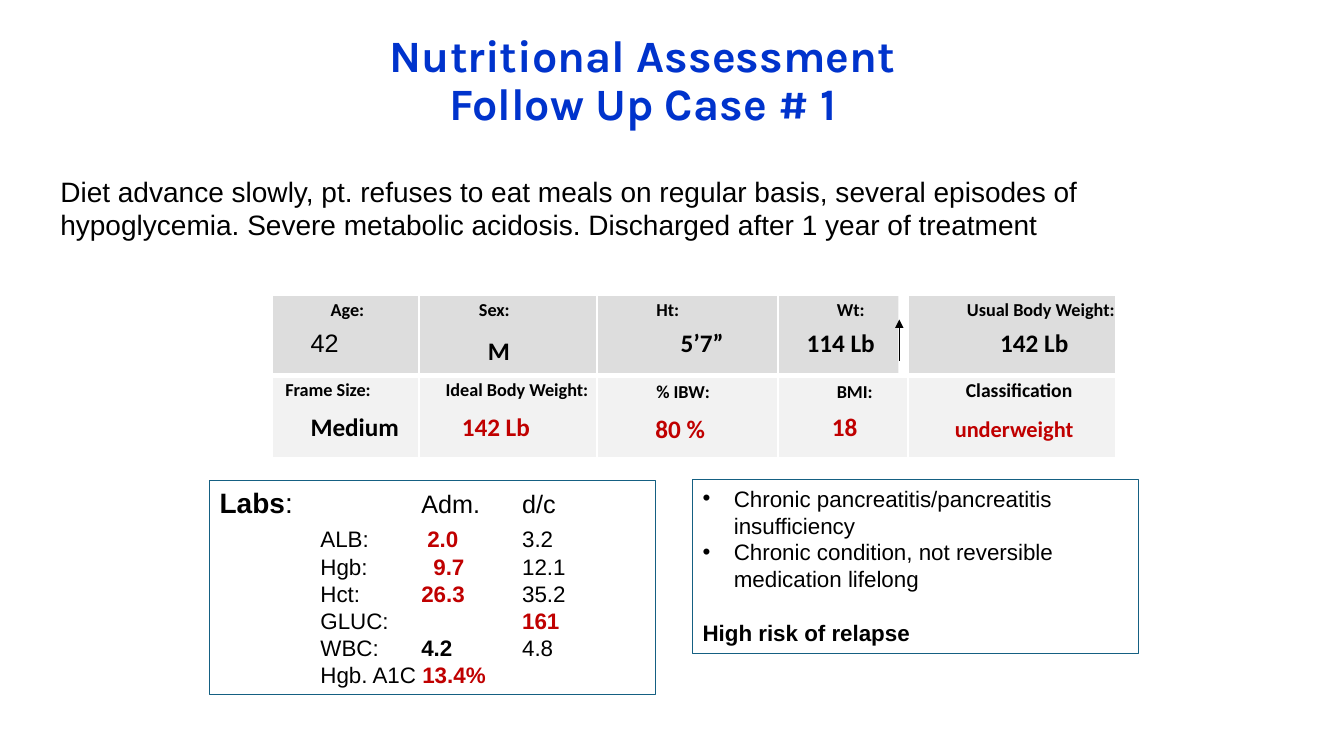
"""Build the nutritional assessment follow-up slide."""
from itertools import pairwise

from lxml import etree
from pptx import Presentation
from pptx import util as u
from pptx.dml.color import RGBColor
from pptx.enum import shapes, text
from pptx.oxml.ns import qn

BLACK, RED, WHITE, BLUE, TEAL = "000000", "C00000", "FFFFFF", "0033CC", "156082"


def paint(hue):
    return RGBColor.from_string(hue)


class Deck:
    base = {"name": "Arial", "bold": False}

    def __init__(self):
        self.file = Presentation()
        self.file.slide_width = u.Inches(13.33)
        self.file.slide_height = u.Inches(7.5)
        self.slide = self.file.slides.add_slide(self.file.slide_layouts[5])

    def style(self, font, hue=BLACK, size=16, **more):
        form = {**self.base, "size": u.Pt(size), **more}
        for key, value in form.items():
            setattr(font, key, value)
        font.color.rgb = paint(hue)

    def put(self, par, *runs):
        for words, form in runs:
            run = par.add_run()
            run.text = words
            self.style(run.font, **form)

    def title(self, words, *box):
        head = self.slide.shapes.title
        head.left, head.top, head.width, head.height = map(u.Inches, box)
        frame = head.text_frame
        frame.text = words
        frame.auto_size = text.MSO_AUTO_SIZE.NONE
        frame.vertical_anchor = text.MSO_ANCHOR.MIDDLE
        par = frame.paragraphs[0]
        par.alignment = text.PP_ALIGN.CENTER
        par.line_spacing = 0.9
        for run in par.runs:
            self.style(run.font, BLUE, 32, name="Karla", bold=True)

    def rect(self, *box, fill=None, line=None, width=0.75):
        item = self.slide.shapes.add_shape(
            shapes.MSO_SHAPE.RECTANGLE, *map(u.Inches, box))
        item.shadow.inherit = False
        if fill:
            item.fill.solid()
            item.fill.fore_color.rgb = paint(fill)
        else:
            item.fill.background()
        if line:
            item.line.color.rgb = paint(line)
            item.line.width = u.Pt(width)
        else:
            item.line.fill.background()
        return item

    def panel(self, *box):
        frame = self.rect(*box, line=TEAL).text_frame
        frame.word_wrap = True
        frame.vertical_anchor = text.MSO_ANCHOR.TOP
        return frame

    def label(self, words, *box, shift=0, wrap=False, inset=0, **form):
        frame = self.slide.shapes.add_textbox(*map(u.Inches, box)).text_frame
        frame.word_wrap = wrap
        frame.margin_left = frame.margin_right = u.Inches(inset)
        frame.margin_top = frame.margin_bottom = u.Inches(inset / 2)
        par = frame.paragraphs[0]
        par._p.get_or_add_pPr().set("marL", str(u.Inches(shift)))
        self.put(par, (words, form))

    def arrow(self, *ends):
        item = self.slide.shapes.add_connector(
            shapes.MSO_CONNECTOR.STRAIGHT, *map(u.Inches, ends))
        item.line.color.rgb = paint(BLACK)
        item.line.width = u.Pt(0.75)
        props = item._element.spPr
        etree.SubElement(props.find(qn("a:ln")), qn("a:tailEnd"), type="triangle")
        etree.SubElement(props, qn("a:effectLst"))

    def add(self, frame, first=False):
        par = frame.paragraphs[0] if first else frame.add_paragraph()
        par.alignment = text.PP_ALIGN.LEFT
        return par

    def tabs(self, par, stops):
        tree = etree.SubElement(par._p.get_or_add_pPr(), qn("a:tabLst"))
        for stop in stops:
            etree.SubElement(tree, qn("a:tab"), pos=str(u.Inches(stop)), algn="l")

    def bullet(self, par):
        props = par._p.get_or_add_pPr()
        props.set("marL", str(u.Inches(0.31)))
        props.set("indent", str(u.Inches(-0.31)))
        etree.SubElement(props, qn("a:buFont"), typeface="Arial")
        etree.SubElement(props, qn("a:buChar"), char="•")


def grid(deck):
    edges = [2.69, 4.15, 5.92, 7.71, 9, 11.06]
    for top, fill in ((2.92, "DDDDDD"), (3.73, "F2F2F2")):
        for left, right in pairwise(edges):
            slip = 0.09 if (top, left) == (2.92, 7.71) else 0
            deck.rect(left - slip, top, right - left, 0.81, fill=fill)
    rules = [(edge, 2.92, 0.01, 1.64) for edge in edges]
    rules += [(2.68, top, 8.39, high)
              for top, high in ((2.92, 0.01), (3.71, 0.04), (4.54, 0.01))]
    for rule in rules:
        deck.rect(*rule, fill=WHITE, line=WHITE, width=0)


def facts(deck):
    heads = [
        ("Age:", 2.78, 2.96, 0.84), ("Sex:", 4.25, 2.96, 0.81),
        ("Ht:", 6.01, 2.96, 0.73), ("Wt:", 7.8, 2.96, 0.78),
        ("Usual Body Weight:", 9.09, 2.96, 1.99),
        ("Frame Size:", 2.33, 3.75, 1.36),
        ("Ideal Body Weight:", 3.92, 3.75, 1.94),
        ("% IBW:", 6.01, 3.77, 1.04), ("BMI:", 7.8, 3.77, 0.87),
    ]
    for words, left, top, wide in heads:
        deck.label(words, left, top, wide, 0.22, shift=0.5,
                   name="Calibri", size=13, bold=True)
    values = [
        ("M", 4.34, 3.33, 0.73, BLACK), ("5’7”", 6.25, 3.25, 0.94, BLACK),
        ("114 Lb", 7.5, 3.25, 1.19, BLACK), ("142 Lb", 9.42, 3.25, 1.19, BLACK),
        ("Medium", 2.58, 4.08, 1.39, BLACK), ("142 Lb", 4.08, 4.08, 1.42, RED),
        ("18", 7.75, 4.08, 1.27, RED),
    ]
    for words, left, top, wide, hue in values:
        deck.label(words, left, top, wide, 0.3, shift=0.5, wrap=hue == RED,
                   name="Calibri", size=18, bold=True, hue=hue)
    deck.label("42", 3.08, 3.25, 0.28, 0.3, size=18)
    for words, left, top, wide, size, hue in (
            ("80 %", 6.5, 4.1, 0.5, 18, RED),
            (" underweight", 9.42, 4.12, 1.24, 16, RED),
            ("Classification", 9.58, 3.75, 1.07, 14, BLACK)):
        deck.label(words, left, top, wide, 0.3, name="Calibri",
                   size=size, bold=True, hue=hue)
    deck.arrow(8.92, 3.58, 8.92, 3.17)


def labs(deck):
    frame = deck.panel(2.08, 4.77, 4.42, 2.12)
    par = deck.add(frame, True)
    deck.tabs(par, (2, 3))
    deck.put(par, ("Labs", {"size": 20, "bold": True}), (":", {"size": 20}),
             ("\tAdm.\td/c", {"size": 18}))
    plain, bold, alert = {}, {"bold": True}, {"bold": True, "hue": RED}
    rows = [
        ((1, 2.06, 3), ("\tALB:", plain), ("\t2.0", alert), ("\t3.2", plain)),
        ((1, 2.12, 3), ("\tHgb:", plain), ("\t9.7", alert), ("\t12.1", plain)),
        ((1, 2, 3), ("\tHct:", plain), ("\t26.3", alert), ("\t35.2", plain)),
        ((1, 3), ("\tGLUC:", plain), ("\t161", alert)),
        ((1, 2, 3), ("\tWBC:", plain), ("\t4.2", bold), ("\t4.8", plain)),
        ((1,), ("\tHgb. A1C ", plain), ("13.4%", alert)),
    ]
    for spot, (stops, *runs) in enumerate(rows):
        par = deck.add(frame)
        if spot == 0:
            par.space_before, par.space_after = u.Pt(4), u.Pt(1)
        deck.tabs(par, stops)
        deck.put(par, *runs)


def notes(deck):
    frame = deck.panel(6.87, 4.76, 4.42, 1.72)
    for spot, words in enumerate((
            "Chronic pancreatitis/pancreatitis insufficiency",
            "Chronic condition, not reversible medication lifelong")):
        par = deck.add(frame, spot == 0)
        deck.bullet(par)
        deck.put(par, (words, {}))
    par = deck.add(frame)
    par.space_before = u.Pt(19)
    deck.put(par, ("High risk of relapse", {"bold": True}))


def main():
    deck = Deck()
    deck.title("Nutritional Assessment\vFollow Up Case # 1", 0.8, 0.09, 11.15, 1.45)
    deck.label("Diet advance slowly, pt. refuses to eat meals on regular basis, "
               "several episodes of hypoglycemia. Severe metabolic acidosis. "
               "Discharged after 1 year of treatment",
               0.5, 1.68, 11.57, 0.77, wrap=True, inset=0.1, size=20)
    grid(deck)
    facts(deck)
    labs(deck)
    notes(deck)
    deck.file.save("out.pptx")


if __name__ == "__main__":
    main()
